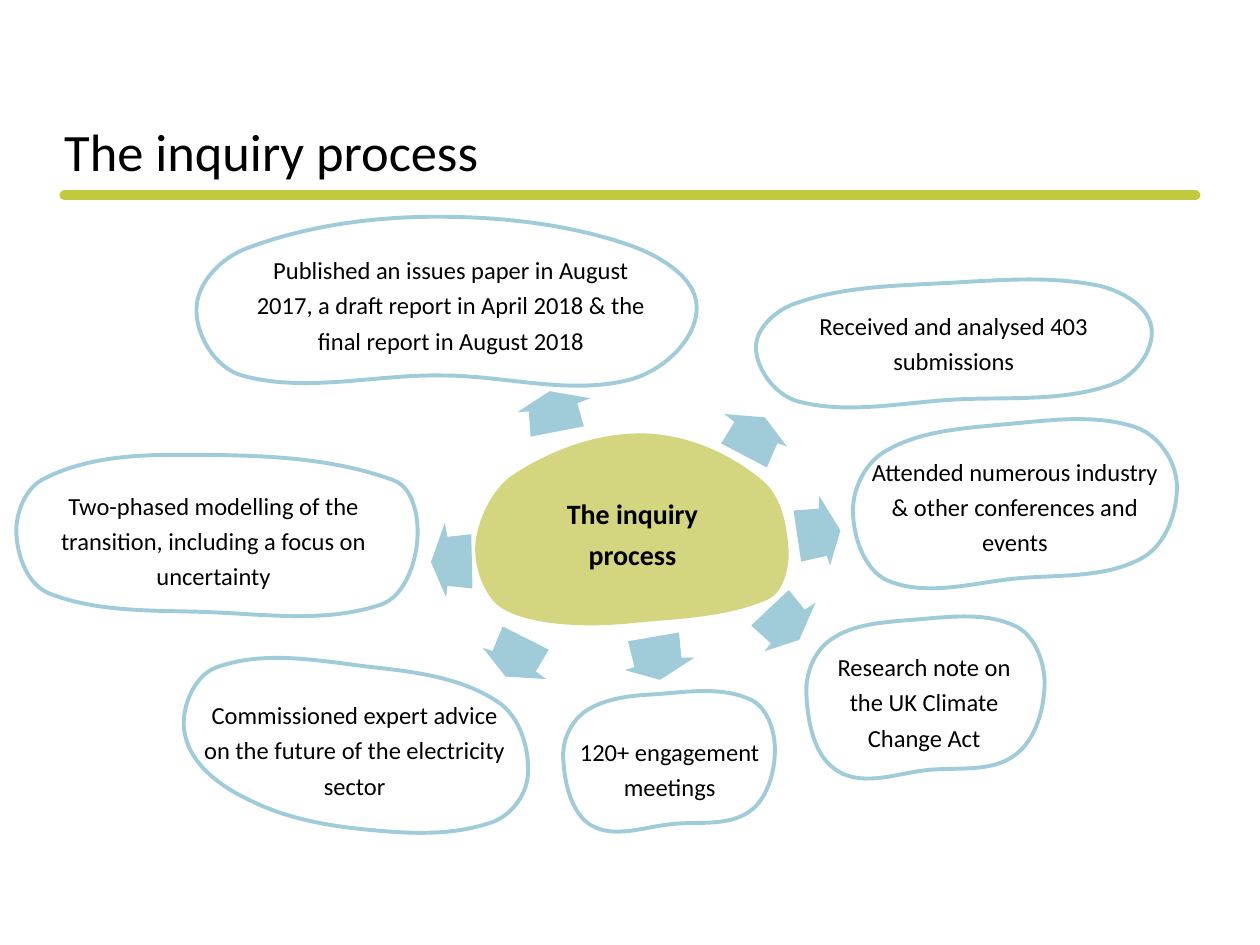
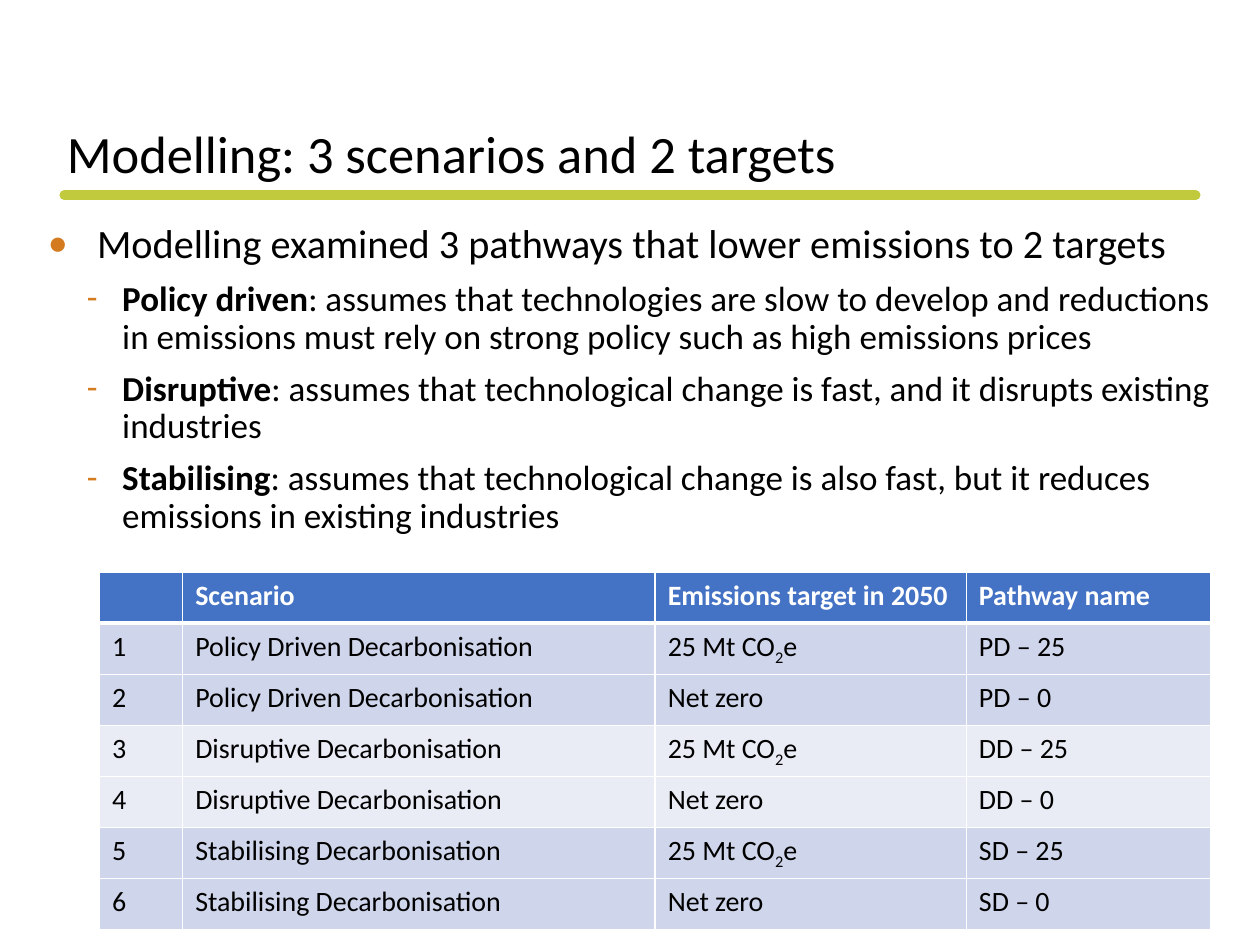
import math
from dataclasses import dataclass

import pptx
import pptx.dml.color
import pptx.enum.shapes
import pptx.enum.text
import pptx.oxml.ns
import pptx.util
from lxml import etree

PX = 9144


@dataclass(frozen=True)
class Theme:
    font: str = "Calibri"
    text: str = "000000"
    white: str = "FFFFFF"
    rule: str = "C1CA3C"
    blue: str = "4298B5"
    olive: str = "A8AD00"
    bullet: str = "D47B20"
    header: str = "4472C4"
    band_dark: str = "CFD5EA"
    band_light: str = "E9EBF5"
    title_size: int = 30
    lead_size: int = 23
    list_size: int = 20
    table_size: int = 16
    hub_size: int = 16
    step_size: int = 14


theme = Theme()
qn = pptx.oxml.ns.qn
rgb = pptx.dml.color.RGBColor.from_string
middle = pptx.enum.text.MSO_ANCHOR.MIDDLE


def add_run(paragraph, text, size, bold=False, color=theme.text):
    run = paragraph.add_run()
    run.text = text
    run.font.name = theme.font
    run.font.size = pptx.util.Pt(size)
    run.font.bold = bold
    run.font.color.rgb = rgb(color)
    return run


def add_outline(slide, outline, box, fill, line=None, smooth=True):
    left, top, width, height = box
    points = [(left + round(x * width / 100), top + round(y * height / 100)) for x, y in outline]
    count = len(points)
    builder = slide.shapes.build_freeform(*points[0], scale=PX)
    builder.add_line_segments(points[1:] + points[:1], close=True)
    shape = builder.convert_to_shape()
    shape.shadow.inherit = False
    origin = [min(axis) for axis in zip(*points)]
    for index, segment in enumerate(list(shape.element.iter(qn("a:lnTo"))) if smooth else []):
        before, start, end, after = (points[(index + step) % count] for step in (-1, 0, 1, 2))
        reach = math.dist(start, end) / 3
        leave = reach / math.dist(before, end)
        arrive = reach / math.dist(start, after)
        handles = [
            [s + (e - b) * leave for b, s, e in zip(before, start, end)],
            [e - (a - s) * arrive for s, e, a in zip(start, end, after)],
            end,
        ]
        curve = etree.Element(qn("a:cubicBezTo"))
        for handle in handles:
            x, y = (round(value - base) for value, base in zip(handle, origin))
            etree.SubElement(curve, qn("a:pt"), x=str(x), y=str(y))
        segment.getparent().replace(segment, curve)
    shape.fill.solid()
    shape.fill.fore_color.rgb = rgb(fill)
    if line:
        shape.line.color.rgb = rgb(line)
        shape.line.width = pptx.util.Pt(2.25)
    else:
        shape.line.fill.background()
    for color in shape.element.spPr.iter(qn("a:srgbClr")):
        if color.get("val") != theme.white:
            etree.SubElement(color, qn("a:alpha"), val="50000")
    return shape


deck = pptx.Presentation()
deck.slide_width = 1000 * PX
deck.slide_height = 750 * PX

slides = []
for layout, heading, left, top in [
    (5, "The inquiry process", 41, 50),
    (1, "Modelling: 3 scenarios and 2 targets", 43, 52),
]:
    slide = deck.slides.add_slide(deck.slide_layouts[layout])
    title = slide.shapes.title
    title.left, title.top, title.width, title.height = left * PX, top * PX, 862 * PX, 145 * PX
    title.text_frame.vertical_anchor = middle
    paragraph = title.text_frame.paragraphs[0]
    paragraph.alignment = pptx.enum.text.PP_ALIGN.LEFT
    paragraph.line_spacing = 0.9
    add_run(paragraph, heading, theme.title_size)
    rule = slide.shapes.add_connector(
        pptx.enum.shapes.MSO_CONNECTOR.STRAIGHT, 51 * PX, 155 * PX, 949 * PX, 155 * PX)
    rule.line.color.rgb = rgb(theme.rule)
    rule.line.width = pptx.util.Pt(5.5)
    rule.line._get_or_add_ln().set("cap", "rnd")
    etree.SubElement(rule.element.spPr, qn("a:effectLst"))
    slides.append(slide)
process, modelling = slides

pebble = [(0, 49), (10, 13), (44, 0), (88, 4), (100, 42), (88, 89), (52, 99), (13, 100)]
tilted = [(0, 55), (10, 17), (46, 0), (87, 2), (100, 38), (90, 85), (51, 98), (11, 100)]
drooping = [(0, 44), (9, 4), (53, 3), (91, 24), (100, 65), (90, 94), (55, 99), (18, 81)]
domed = [(0, 56), (10, 19), (48, 0), (87, 18), (100, 56), (87, 100), (49, 98), (9, 98)]
wide = [(0, 49), (7, 15), (39, 0), (93, 16), (99, 55), (90, 93), (49, 98), (8, 86)]
core = [(100, 62), (92, 25), (54, 0), (13, 20), (0, 53), (5, 85), (20, 97), (48, 98), (93, 86)]
arrow = [(100, 47), (64, 0), (61, 15), (0, 12), (2, 85), (61, 82), (67, 100)]

for outline, box, text_box, lines in [
    (core, (378, 344, 248, 154), (432, 384, 140, 72), ["The inquiry process"]),
    (pebble, (640, 492, 189, 120), (645, 508, 177, 95),
     ["Research note on the UK Climate Change Act"]),
    (tilted, (600, 225, 314, 94), (592, 237, 330, 65),
     ["Received and analysed 403 submissions"]),
    (tilted, (677, 337, 257, 124), (681, 353, 249, 95),
     ["Attended numerous industry & other conferences and events"]),
    (drooping, (147, 525, 272, 135), (147, 546, 269, 95),
     ["Commissioned expert advice on the future of the electricity sector"]),
    (wide, (13, 361, 321, 128), (32, 380, 275, 95),
     ["Two-phased modelling of the transition, including a focus on uncertainty"]),
    (pebble, (447, 551, 168, 104), (435, 575, 193, 67), ["120+ engagement", "meetings"]),
    (domed, (156, 172, 397, 129), (193, 193, 330, 93),
     ["Published an issues paper in August 2017, a draft report in April 2018"
      " & the final report in August 2018"]),
]:
    is_hub = outline is core
    add_outline(process, outline, box, theme.olive if is_hub else theme.white,
                None if is_hub else theme.blue)
    step = process.shapes.add_textbox(*(length * PX for length in text_box)).text_frame
    step.word_wrap = True
    step.auto_size = pptx.enum.text.MSO_AUTO_SIZE.SHAPE_TO_FIT_TEXT
    for index, line in enumerate(lines):
        paragraph = step.add_paragraph() if index else step.paragraphs[0]
        paragraph.alignment = pptx.enum.text.PP_ALIGN.CENTER
        paragraph.line_spacing = 1.2
        add_run(paragraph, line, theme.hub_size if is_hub else theme.step_size, is_hub)

mirrored_arrow = [(100 - x, y) for x, y in arrow]
for outline, width, height, places in [
    (arrow, 33, 59, [(424, 297, 260.3), (342, 415, 180)]),
    (mirrored_arrow, 35, 56, [(580, 318, 116.3), (393, 494, 295.3), (632, 394, 170.1),
                              (606, 466, 225.3), (505, 494, 258.8)]),
]:
    for left, top, angle in places:
        pointer = add_outline(process, outline, (left, top, width, height), theme.blue,
                              smooth=False)
        pointer.rotation = angle

summary = modelling.placeholders[1]
summary.left, summary.top, summary.width, summary.height = 28 * PX, 199 * PX, 945 * PX, 205 * PX
summary.text_frame.vertical_anchor = middle
summary.text_frame.auto_size = pptx.enum.text.MSO_AUTO_SIZE.NONE
for index, (name, description, after) in enumerate([
    ("", "Modelling examined 3 pathways that lower emissions to 2 targets", 8),
    ("Policy driven", ": assumes that technologies are slow to develop and reductions in "
     "emissions must rely on strong policy such as high emissions prices", 8),
    ("Disruptive", ": assumes that technological change is fast, and it disrupts existing "
     "industries", 8),
    ("Stabilising", ": assumes that technological change is also fast, but it reduces "
     "emissions in existing industries", 12),
]):
    paragraph = summary.text_frame.add_paragraph() if index else summary.text_frame.paragraphs[0]
    margin, hanging, mark = (59, 28, "-") if name else (39, 39, "•")
    size = theme.list_size if name else theme.lead_size
    properties = paragraph._p.get_or_add_pPr()
    properties.set("marL", str(margin * PX))
    properties.set("indent", str(-hanging * PX))
    bullet_color = etree.SubElement(properties, qn("a:buClr"))
    etree.SubElement(bullet_color, qn("a:srgbClr"), val=theme.bullet)
    etree.SubElement(properties, qn("a:buFont"), typeface=theme.font)
    etree.SubElement(properties, qn("a:buChar"), char=mark)
    paragraph.line_spacing = 0.9
    paragraph.space_before = pptx.util.Pt(0)
    paragraph.space_after = pptx.util.Pt(after)
    if name:
        add_run(paragraph, name, size, bold=True)
    add_run(paragraph, description, size)

rows = [("", "Scenario", "Emissions target in 2050", "Pathway name")]
for scenario, code in [("Policy Driven", "PD"), ("Disruptive", "DD"), ("Stabilising", "SD")]:
    for target, level in [("25 Mt CO|2|e", "25"), ("Net zero", "0")]:
        rows.append((str(len(rows)), f"{scenario} Decarbonisation", target, f"{code} – {level}"))

pathways = modelling.shapes.add_table(
    len(rows), 4, 79 * PX, 454 * PX, 882 * PX, 284 * PX).table
pathways.horz_banding = False
for column, width in zip(pathways.columns, (66, 375, 247, 194)):
    column.width = width * PX
for row_index, row in enumerate(rows):
    pathways.rows[row_index].height = 284 * PX // len(rows)
    is_header = row_index == 0
    band = theme.band_light if row_index in (3, 4) else theme.band_dark
    for column_index, value in enumerate(row):
        cell = pathways.cell(row_index, column_index)
        for side in ("L", "R", "T", "B"):
            thick = (row_index, side) in ((0, "B"), (1, "T"))
            border = etree.SubElement(cell._tc.get_or_add_tcPr(), qn(f"a:ln{side}"),
                                      w=str(pptx.util.Pt(3 if thick else 1)))
            border_fill = etree.SubElement(border, qn("a:solidFill"))
            etree.SubElement(border_fill, qn("a:srgbClr"), val=theme.white)
        cell.fill.solid()
        cell.fill.fore_color.rgb = rgb(theme.header if is_header else band)
        if not value:
            continue
        for part_index, part in enumerate(value.split("|")):
            run = add_run(cell.text_frame.paragraphs[0], part, theme.table_size, is_header,
                          theme.white if is_header else theme.text)
            if part_index == 1:
                run.font._element.set("baseline", "-25000")

deck.save("out.pptx")
